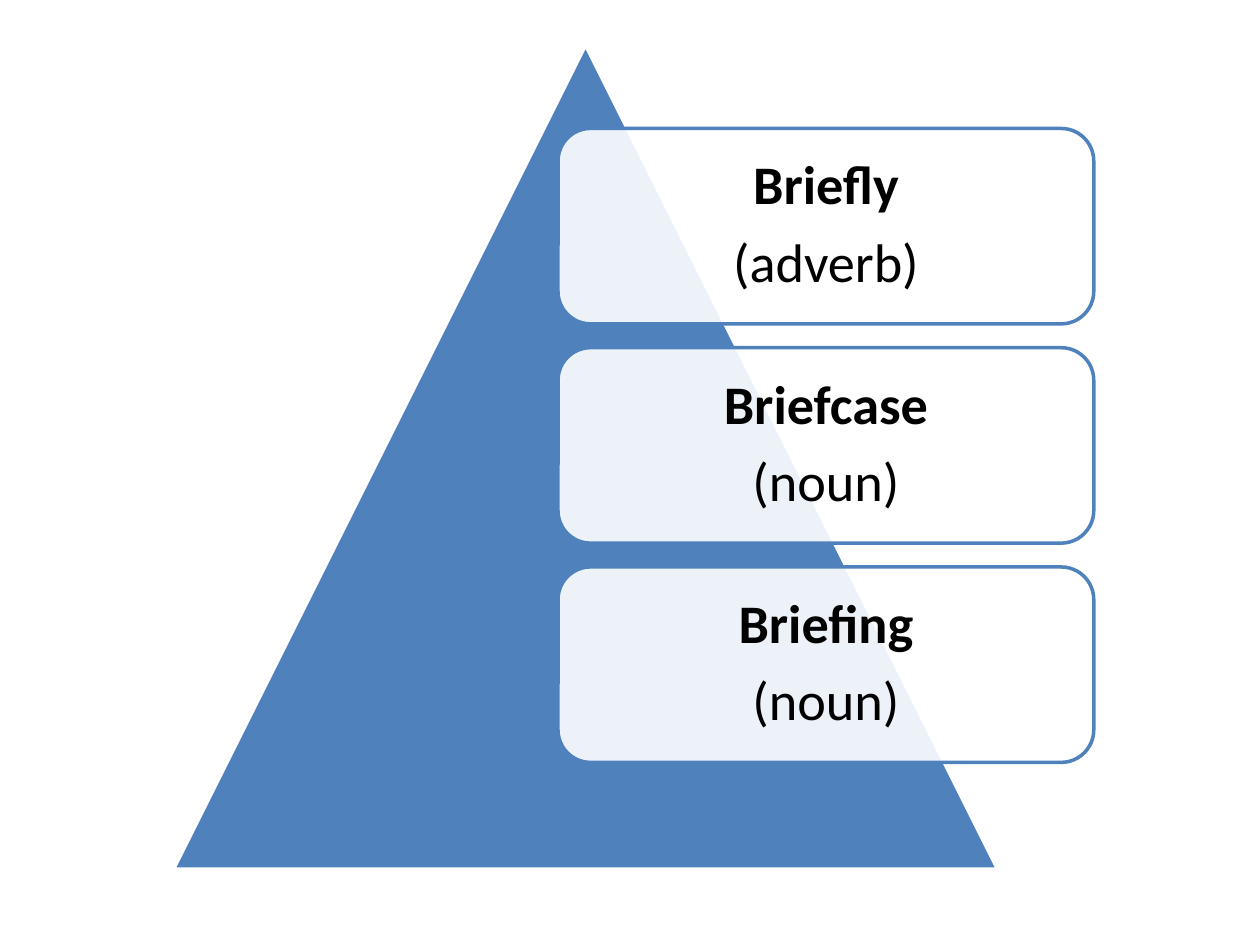
from lxml import etree
from pptx import Presentation
from pptx import util as u
from pptx.dml.color import RGBColor
from pptx.enum import shapes, text
from pptx.oxml.ns import qn

BLUE = RGBColor(0x4F, 0x81, 0xBD)
WHITE = RGBColor(0xFF, 0xFF, 0xFF)
BLACK = RGBColor(0x00, 0x00, 0x00)

WORDS = [
    ("Briefly", "(adverb)"),
    ("Briefcase", "(noun)"),
    ("Briefing", "(noun)"),
]
FIRST_CARD_TOP = 2.59
CARD_PITCH = 4.42


def add_outlined(slide, preset, left, top, width, height, fill, line):
    outlined = slide.shapes.add_shape(
        preset, u.Cm(left), u.Cm(top), u.Cm(width), u.Cm(height)
    )
    outlined.shadow.inherit = False
    outlined.fill.solid()
    outlined.fill.fore_color.rgb = fill
    outlined.line.color.rgb = line
    outlined.line.width = u.Pt(2)
    return outlined


def set_opacity(shape, percent):
    colour = shape.fill._xPr.find(qn("a:solidFill"))[0]
    etree.SubElement(colour, qn("a:alpha")).set("val", str(percent * 1000))


def write_line(paragraph, wording, bold):
    paragraph.alignment = text.PP_ALIGN.CENTER
    paragraph.line_spacing = 0.9
    paragraph.space_after = u.Pt(10.8)
    run = paragraph.add_run()
    run.text = wording
    run.font.name = "Calibri"
    run.font.size = u.Pt(31)
    run.font.bold = bold
    run.font.color.rgb = BLACK


def add_word_card(slide, top, word, word_class):
    card = add_outlined(
        slide, shapes.MSO_SHAPE.ROUNDED_RECTANGLE, 11.25, top, 10.8, 3.94, WHITE, BLUE
    )
    set_opacity(card, 90)
    frame = card.text_frame
    frame.word_wrap = True
    frame.vertical_anchor = text.MSO_ANCHOR.MIDDLE
    frame.margin_left = frame.margin_right = u.Cm(0.13)
    frame.margin_top = frame.margin_bottom = u.Cm(0.13)
    write_line(frame.paragraphs[0], word, True)
    write_line(frame.add_paragraph(), word_class, False)


def main():
    deck = Presentation()
    deck.slide_width, deck.slide_height = u.Cm(25.4), u.Cm(19.05)
    slide = deck.slides.add_slide(deck.slide_layouts[6])
    add_outlined(
        slide, shapes.MSO_SHAPE.ISOSCELES_TRIANGLE, 3.5, 0.91, 16.61, 16.61, BLUE, WHITE
    )
    for index, (word, word_class) in enumerate(WORDS):
        add_word_card(slide, FIRST_CARD_TOP + index * CARD_PITCH, word, word_class)
    deck.save("out.pptx")


if __name__ == "__main__":
    main()
